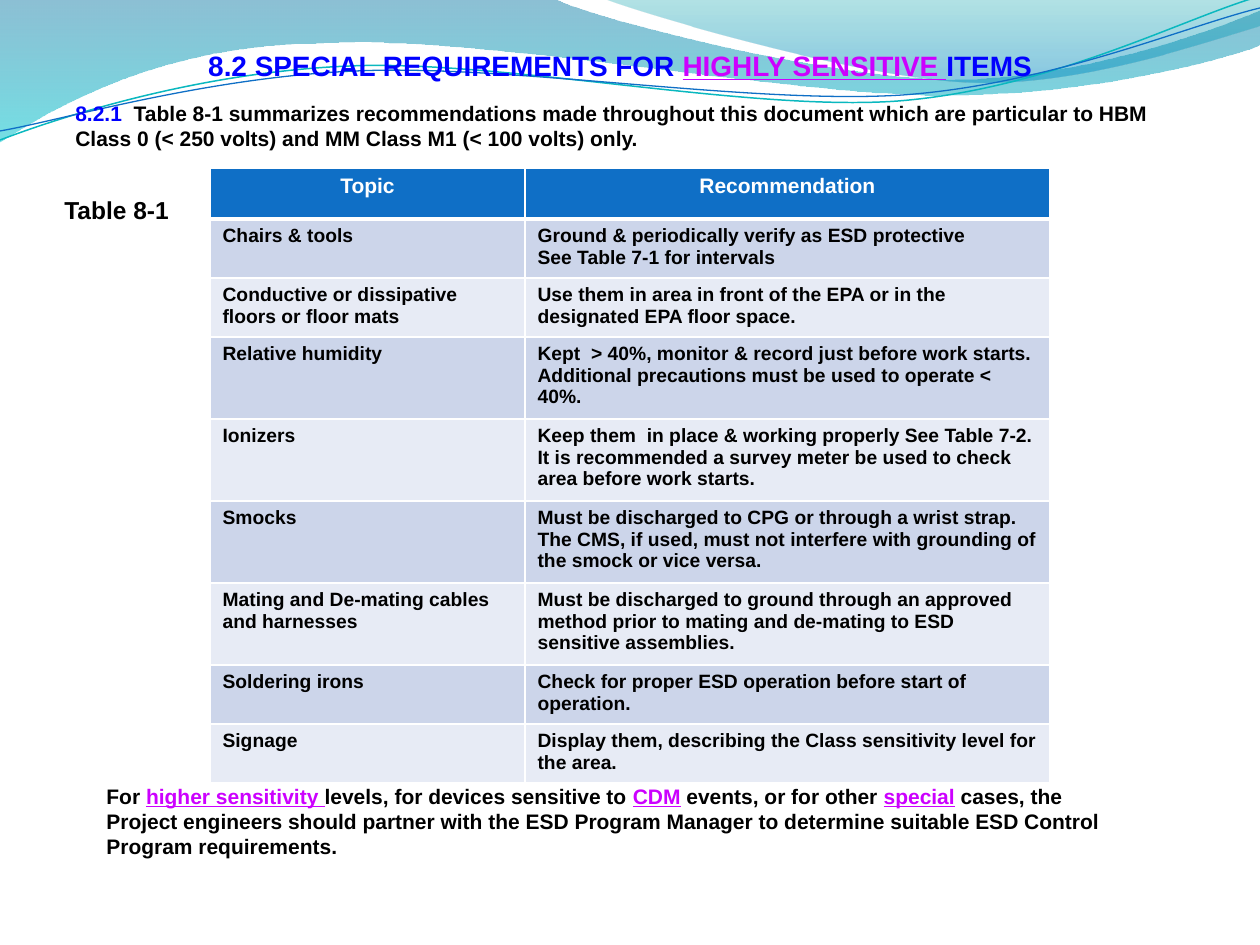
from lxml.etree import SubElement
from pptx import Presentation
from pptx.dml.color import RGBColor
from pptx.enum.text import MSO_AUTO_SIZE as AUTO_SIZE, PP_ALIGN as ALIGN
from pptx.oxml.ns import qn
from pptx.util import Emu, Pt

SCALE = 914400 / 126
FONT = "Arial"
WHITE = RGBColor(0xFF, 0xFF, 0xFF)
BLACK = RGBColor(0, 0, 0)
BLUE = RGBColor(0, 0, 0xFF)
MAGENTA = RGBColor(0xCC, 0, 0xFF)
HEADER = RGBColor(0x0F, 0x6F, 0xC6)
BANDS = [RGBColor(0xE7, 0xEB, 0xF5), RGBColor(0xCC, 0xD5, 0xEA)]
TEAL = RGBColor(0x0A, 0xB8, 0xBF)

LEFT_WAVE = [
    [(0, -1)], [(554, -1)],
    [(600, 21), (837, 79), (955, 79)],
    [(1075, 79), (1207, 33), (1260, 11)],
    [(1261, 45)],
    [(1239, 55), (1096, 96), (940, 95)],
    [(784, 95), (481, 35), (324, 43)],
    [(163, 44), (58, 105), (-1, 142)],
]
RIGHT_WAVE = [
    [(604, -1)],
    [(641, 14), (859, 78), (969, 82)],
    [(1079, 87), (1211, 40), (1260, 26)],
    [(1260, 0)],
]
TEAL_LINE = [
    [(0, 140)],
    [(60, 117), (199, 72), (349, 66)],
    [(498, 59), (747, 112), (898, 101)],
    [(1050, 89), (1182, 19), (1257, -3)],
]
BLUE_LINE = [
    [(0, 131)],
    [(59, 121), (207, 77), (357, 71)],
    [(508, 64), (752, 105), (903, 95)],
    [(1053, 84), (1186, 26), (1260, 8)],
]
LEFT_STOPS = [(0, RGBColor(0, 0x74, 0xA1), 45), (1, RGBColor(0, 0xC6, 0xCF), 55)]
RIGHT_STOPS = [(0, RGBColor(0, 0xA1, 0xA9), 30), (0.8, RGBColor(0, 0x8B, 0xBF), 45)]

ROWS = [
    (51, "Topic", "Recommendation"),
    (59, "Chairs & tools",
     "Ground & periodically verify as ESD protective\vSee Table 7-1 for intervals"),
    (59, "Conductive or dissipative floors or floor mats",
     "Use them in area in front of the EPA or in the designated EPA floor space."),
    (82, "Relative humidity",
     "Kept  > 40%, monitor & record just before work starts. "
     "Additional precautions must be used to operate < 40%."),
    (82, "Ionizers",
     "Keep them  in place & working properly See Table 7-2. "
     "It is recommended a survey meter be used to check area before work starts."),
    (82, "Smocks",
     "Must be discharged to CPG or through a wrist strap. "
     "The CMS, if used, must not interfere with grounding of the smock or vice versa."),
    (82, "Mating and De-mating cables and harnesses",
     "Must be discharged to ground through an approved method "
     "prior to mating and de-mating to ESD sensitive assemblies."),
    (59, "Soldering irons", "Check for proper ESD operation before start of operation."),
    (59, "Signage", "Display them, describing the Class sensitivity level for the area."),
]


def px(n):
    return Emu(round(n * SCALE))


def bend(sp, segments):
    lines = iter(list(sp._element.iter(qn("a:lnTo"))))
    for segment in segments[1:]:
        first, *rest = [next(lines) for _ in segment]
        if rest:
            first.tag = qn("a:cubicBezTo")
            for line in rest:
                first.append(line[0])
                line.getparent().remove(line)


def add_outline(s, segments, close):
    points = [(px(x), px(y)) for segment in segments for x, y in segment]
    fb = s.shapes.build_freeform(*points[0], scale=1.0)
    fb.add_line_segments(points[1:], close=close)
    sp = fb.convert_to_shape()
    bend(sp, segments)
    sp.shadow.inherit = False
    return sp


def add_wave(s, segments, stops):
    sp = add_outline(s, segments, True)
    sp.line.fill.background()
    sp.fill.gradient()
    sp.fill.gradient_angle = 270
    for stop, (position, color, _) in zip(sp.fill.gradient_stops, stops):
        stop.position = position
        stop.color.rgb = color
    for clr, (_, _, opacity) in zip(sp._element.spPr.iter(qn("a:srgbClr")), stops):
        SubElement(clr, qn("a:alpha")).set("val", str(opacity * 1000))


def add_curve(s, segments, color, width):
    sp = add_outline(s, segments, False)
    sp.fill.background()
    sp.line.color.rgb = color
    sp.line.width = Pt(width)


def set_font(p, size):
    p.font.name = FONT
    p.font.size = Pt(size)
    p.font.bold = True


def add_text(s, box, size, runs, align=ALIGN.LEFT):
    tf = s.shapes.add_textbox(*map(px, box)).text_frame
    tf.word_wrap = True
    tf.auto_size = AUTO_SIZE.SHAPE_TO_FIT_TEXT
    p = tf.paragraphs[0]
    p.alignment = align
    set_font(p, size)
    for text, color in runs:
        r = p.add_run()
        r.text = text
        r.font.color.rgb = color
        if color == MAGENTA:
            r.font.underline = True


def set_border(cell, side, width):
    tc_pr = cell._tc.get_or_add_tcPr()
    ln = tc_pr.makeelement(qn(f"a:ln{side}"), {"w": str(Pt(width))})
    SubElement(SubElement(ln, qn("a:solidFill")), qn("a:srgbClr")).set("val", str(WHITE))
    tc_pr.insert(0, ln)


def add_recommendations(s):
    height = sum(row[0] for row in ROWS)
    table = s.shapes.add_table(len(ROWS), 2, px(210), px(168), px(840), px(height)).table
    for column, width in zip(table.columns, (315, 525)):
        column.width = px(width)
    for i, (row_height, *texts) in enumerate(ROWS):
        table.rows[i].height = px(row_height)
        for j, text in enumerate(texts):
            cell = table.cell(i, j)
            cell.text = text
            cell.fill.solid()
            cell.fill.fore_color.rgb = BANDS[i % 2] if i else HEADER
            for side in "BTRL":
                thick = (i, side) in ((0, "B"), (1, "T"))
                set_border(cell, side, 3 if thick else 1)
            p = cell.text_frame.paragraphs[0]
            p.alignment = ALIGN.LEFT if i else ALIGN.CENTER
            set_font(p, 11 if i else 12)
            p.font.color.rgb = BLACK if i else WHITE


def main():
    prs = Presentation()
    prs.slide_width, prs.slide_height = px(1260), px(945)
    s = prs.slides.add_slide(prs.slide_layouts[6])
    add_wave(s, LEFT_WAVE, LEFT_STOPS)
    add_wave(s, RIGHT_WAVE, RIGHT_STOPS)
    add_curve(s, TEAL_LINE, TEAL, 0.85)
    add_curve(s, BLUE_LINE, HEADER, 0.75)
    add_text(s, (137, 42, 966, 47), 16, [
        ("8.2 SPECIAL REQUIREMENTS FOR ", BLUE),
        ("HIGHLY SENSITIVE ", MAGENTA),
        ("ITEMS", BLUE),
    ], ALIGN.CENTER)
    add_text(s, (63, 94, 1144, 115), 12, [
        ("8.2.1", BLUE),
        ("  Table 8-1 summarizes recommendations made throughout this document which are "
         "particular to HBM Class 0 (< 250 volts) and MM Class M1 (< 100 volts) only.", BLACK),
    ])
    add_recommendations(s)
    add_text(s, (52, 189, 136, 43), 14, [("Table 8-1", BLACK)])
    add_text(s, (94, 777, 1050, 89), 12, [
        ("For ", BLACK),
        ("higher sensitivity ", MAGENTA),
        ("levels, for devices sensitive to ", BLACK),
        ("CDM", MAGENTA),
        (" events, or for other ", BLACK),
        ("special", MAGENTA),
        (" cases, the Project engineers should partner with the ESD Program Manager "
         "to determine suitable ESD Control Program requirements.", BLACK),
    ])
    prs.save("out.pptx")


if __name__ == "__main__":
    main()
